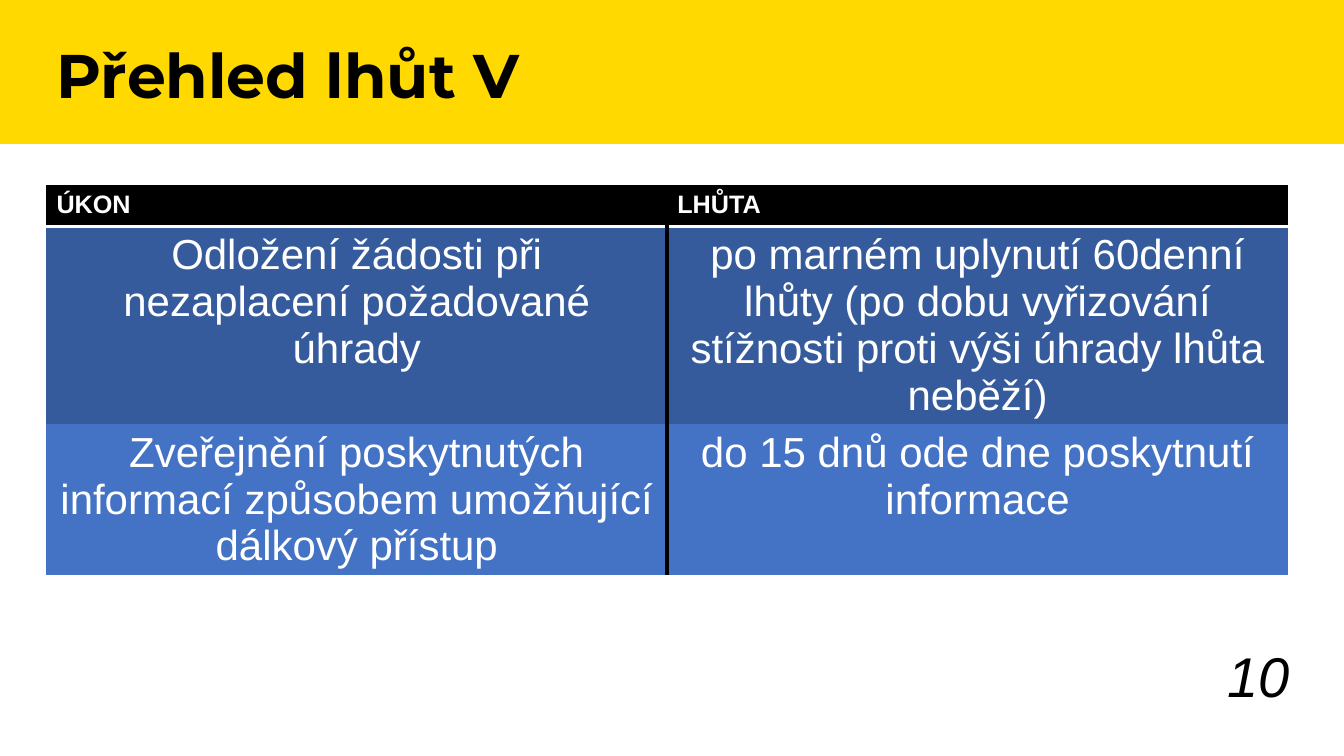
from lxml import etree
from pptx import Presentation
from pptx import util as u
from pptx.dml.color import RGBColor
from pptx.enum import shapes, text
from pptx.oxml import ns

YELLOW = RGBColor(0xFF, 0xD9, 0x00)
BLACK = RGBColor(0, 0, 0)
WHITE = RGBColor(0xFF, 0xFF, 0xFF)
NAVY = RGBColor(0x36, 0x5B, 0x9D)
BLUE = RGBColor(0x44, 0x72, 0xC4)
PLAIN = "{2D5ABB26-0587-4C30-8999-92F81FD0307C}"
WIDE, HIGH = u.Cm(33.87), u.Cm(19.05)
EDGE, SPAN = u.Cm(1.17), u.Cm(31.29)
FILLS = [BLACK, NAVY, BLUE]
TALLS = [u.Cm(1.04), u.Cm(4.98), u.Cm(3.78)]
ROWS = [
    ("ÚKON", "LHŮTA"),
    ("Odložení žádosti při nezaplacení požadované úhrady",
     "po marném uplynutí 60denní lhůty (po dobu vyřizování stížnosti "
     "proti výši úhrady lhůta neběží)"),
    ("Zveřejnění poskytnutých informací způsobem umožňující dálkový přístup",
     "do 15 dnů ode dne poskytnutí informace"),
]


def style(para, name, size, color, bold=False, align=text.PP_ALIGN.LEFT):
    para.alignment = align
    font = para.font
    font.name, font.size, font.bold = name, u.Pt(size), bold
    font.color.rgb = color


def rule(cell, side, color, width):
    line = etree.Element(ns.qn(f"a:ln{side}"), w=str(u.Pt(width)))
    fill = etree.SubElement(line, ns.qn("a:solidFill"))
    etree.SubElement(fill, ns.qn("a:srgbClr"), val=str(color))
    cell._tc.get_or_add_tcPr().insert(0, line)


def header(slide, left, top, width, height):
    band = slide.shapes.add_shape(
        shapes.MSO_SHAPE.RECTANGLE, left, top, width, height)
    band.shadow.inherit = False
    band.fill.solid()
    band.fill.fore_color.rgb = YELLOW
    band.line.fill.background()
    title = slide.shapes.title
    title.element.addprevious(band.element)
    title.left, title.top = left + EDGE, top + u.Cm(1.02)
    title.width, title.height = SPAN, height - u.Cm(1.04)
    frame = title.text_frame
    frame.text = "Přehled lhůt V"
    frame.vertical_anchor = text.MSO_ANCHOR.TOP
    frame.auto_size = text.MSO_AUTO_SIZE.NONE
    para = frame.paragraphs[0]
    para.line_spacing = 0.9
    style(para, "Montserrat", 44, BLACK, True)


def terms(slide, left, top, width):
    frame = slide.shapes.add_table(
        len(ROWS), len(ROWS[0]), left, top, width, sum(TALLS))
    table = frame.table
    table.first_row = table.horz_banding = False
    for tag in frame.element.iter(ns.qn("a:tableStyleId")):
        tag.text = PLAIN
    for r, (words, fill, tall) in enumerate(zip(ROWS, FILLS, TALLS)):
        table.rows[r].height = tall
        for c, word in enumerate(words):
            cell = table.cell(r, c)
            cell.text = word
            cell.fill.solid()
            cell.fill.fore_color.rgb = fill
            para = cell.text_frame.paragraphs[0]
            if r == 0:
                style(para, "Arial", 18, WHITE, True)
                rule(cell, "B", WHITE, 2)
            else:
                style(para, "Arial", 30, WHITE, align=text.PP_ALIGN.CENTER)
                rule(cell, "RL"[c], BLACK, 3)


def number(slide, left, top, width, height):
    frame = slide.shapes.add_textbox(left, top, width, height).text_frame
    frame.word_wrap = True
    frame.vertical_anchor = text.MSO_ANCHOR.BOTTOM
    frame.text = "10"
    para = frame.paragraphs[0]
    style(para, "Arial", 40, BLACK, align=text.PP_ALIGN.RIGHT)
    para.font.italic = True


def main():
    deck = Presentation()
    deck.slide_width, deck.slide_height = WIDE, HIGH
    slide = deck.slides.add_slide(deck.slide_layouts[5])
    header(slide, 0, 0, WIDE, u.Cm(3.63))
    terms(slide, EDGE, u.Cm(4.67), SPAN)
    number(slide, u.Cm(25.12), u.Cm(16.54), u.Cm(7.62), u.Cm(1.45))
    deck.save("out.pptx")


if __name__ == "__main__":
    main()
